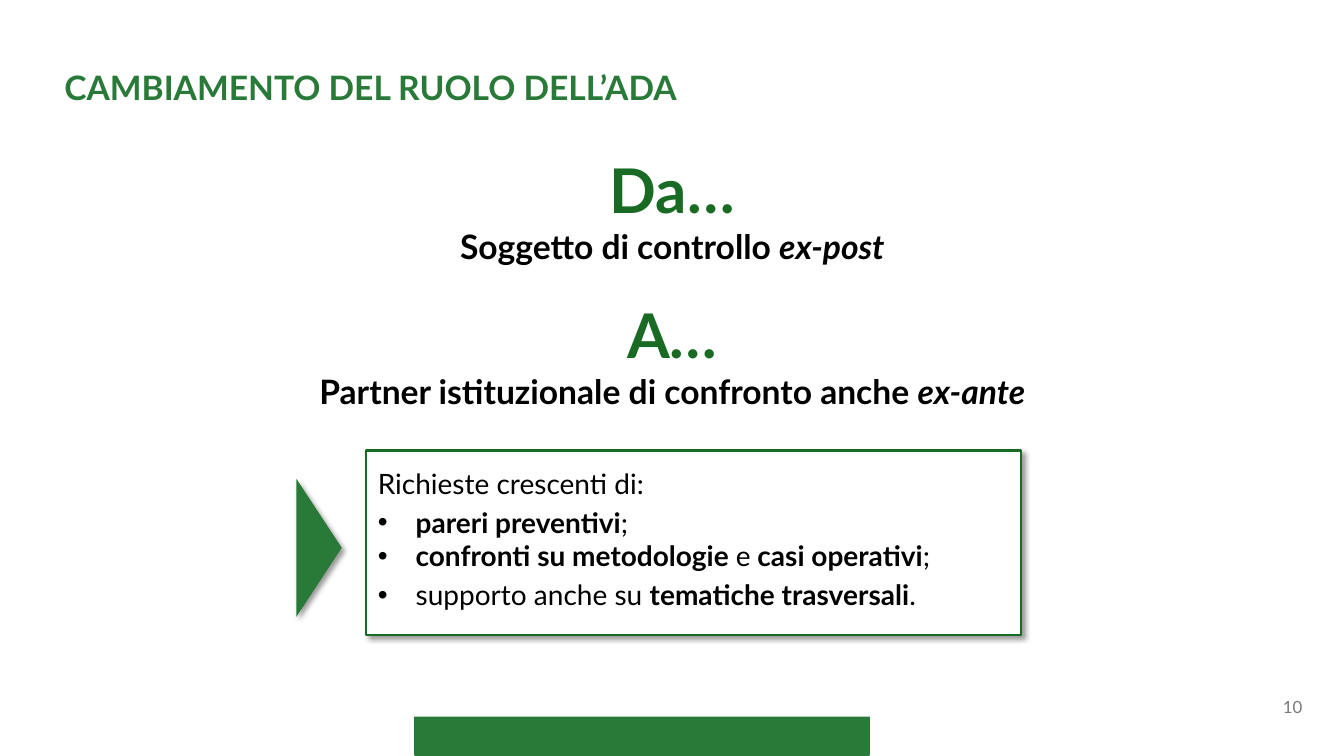
import lxml.etree
import pptx
import pptx.dml.color
import pptx.enum.shapes
import pptx.enum.text
import pptx.oxml.ns
import pptx.util

Pt = pptx.util.Pt
Kind = pptx.enum.shapes.MSO_SHAPE
Align = pptx.enum.text.PP_ALIGN
Anchor = pptx.enum.text.MSO_ANCHOR
qn = pptx.oxml.ns.qn


def tint(code):
    return pptx.dml.color.RGBColor.from_string(code)


def child(node, tag, **attrs):
    return lxml.etree.SubElement(node, qn(tag), attrs)


class Board:
    font = "Lato"
    green = "297A38"
    dark = "196B24"
    black = "000000"
    white = "FFFFFF"
    gray = "797979"

    def __init__(self, slide):
        self.slide = slide

    def shape(self, kind, left, top, width, height, fill, line=None, turn=0):
        item = self.slide.shapes.add_shape(
            kind, Pt(left), Pt(top), Pt(width), Pt(height))
        item.shadow.inherit = False
        item.fill.solid()
        item.fill.fore_color.rgb = tint(fill)
        if line:
            item.line.color.rgb = tint(line)
            item.line.width = Pt(1.5)
        else:
            item.line.fill.background()
        item.rotation = turn
        return item

    def shade(self, item):
        """Give the shape a soft shadow towards the lower right."""
        effects = item._element.spPr.find(qn("a:effectLst"))
        outer = child(effects, "a:outerShdw", blurRad=str(Pt(4)), dist=str(Pt(3)),
                      dir=str(45 * 60000), algn="tl", rotWithShape="0")
        color = child(outer, "a:srgbClr", val=self.black)
        child(color, "a:alpha", val="40000")

    def box(self, left, top, width, height, anchor=Anchor.TOP):
        item = self.slide.shapes.add_textbox(
            Pt(left), Pt(top), Pt(width), Pt(height))
        frame = item.text_frame
        frame.word_wrap = True
        frame.vertical_anchor = anchor
        return frame

    def text(self, frame, *runs, size=20, color=black, align=Align.LEFT,
             before=0, bullet=False):
        """Add a paragraph; each run is (words, style), style from "b" and "i"."""
        first = frame.paragraphs[0]
        para = frame.add_paragraph() if first.runs else first
        para.alignment = align
        if before:
            para.space_before = Pt(before)
        if bullet:
            props = para._p.get_or_add_pPr()
            props.set("marL", str(Pt(27)))
            props.set("indent", str(Pt(-27)))
            child(props, "a:buFont", typeface="Arial")
            child(props, "a:buChar", char="•")
        for words, style in runs:
            run = para.add_run()
            run.text = words
            run.font.name = self.font
            run.font.size = Pt(size)
            run.font.color.rgb = tint(color)
            run.font.bold = "b" in style
            run.font.italic = "i" in style

    def stage(self, left, top, width, head, lead, term):
        """Large green word over a line that ends in italics."""
        frame = self.box(left, top, width, 90)
        self.text(frame, (head, "b"), size=44, color=self.dark,
                  align=Align.CENTER)
        self.text(frame, (lead, "b"), (term, "bi"), size=24,
                  align=Align.CENTER)


def main():
    deck = pptx.Presentation()
    deck.slide_width, deck.slide_height = Pt(960), Pt(540)
    board = Board(deck.slides.add_slide(deck.slide_layouts[6]))

    board.shape(Kind.RECTANGLE, 296.64, 510.5, 324, 28.8, board.green, board.green)
    board.shape(Kind.RECTANGLE, 18.7, 18.7, 924.5, 493.2, board.white)

    title = board.box(38.9, 43.9, 870.5, 36)
    board.text(title, ("CAMBIAMENTO DEL RUOLO DELL’ADA", "b"), size=24,
               color=board.green)

    board.stage(313.2, 105.1, 334, "Da…", "Soggetto di controllo ", "ex-post")

    panel = board.shape(Kind.RECTANGLE, 261.4, 321.8, 468, 131.8,
                        board.white, board.dark)
    board.shade(panel)
    needs = board.box(262.8, 329.8, 437.8, 111.6)
    board.text(needs, ("Richieste crescenti di:", ""))
    board.text(needs, ("pareri preventivi", "b"), (";", ""),
               before=3.6, bullet=True)
    board.text(needs, ("confronti su metodologie ", "b"), ("e", ""),
               (" casi operativi", "b"), (";", ""), bullet=True)
    board.text(needs, ("supporto anche su ", ""), ("tematiche trasversali", "b"),
               (".", ""), before=3.6, bullet=True)

    board.stage(208.8, 208.8, 542.9, "A…",
                "Partner istituzionale di confronto anche ", "ex-ante")

    arrow = board.shape(Kind.ISOSCELES_TRIANGLE, 178.6, 375.1, 98.6, 32.4,
                        board.green, turn=90)
    board.shade(arrow)

    number = board.box(721.4, 490.3, 216, 28.8, Anchor.MIDDLE)
    board.text(number, ("10", ""), size=12, color=board.gray, align=Align.RIGHT)

    deck.save("out.pptx")


if __name__ == "__main__":
    main()
